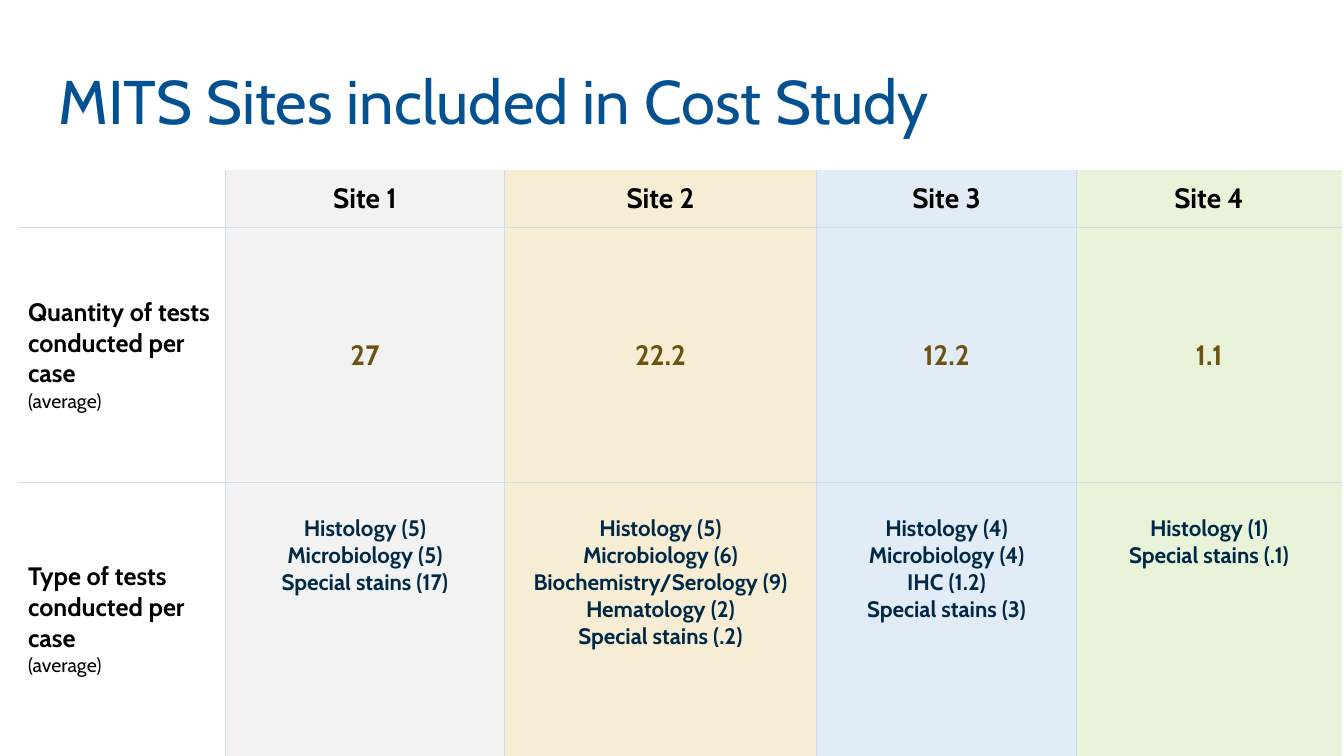
from lxml.etree import SubElement
from pptx import Presentation
from pptx.dml.color import RGBColor
from pptx.enum.text import MSO_ANCHOR, MSO_AUTO_SIZE, PP_ALIGN
from pptx.oxml.ns import qn
from pptx.util import Pt

FONT = "Cabin"
TITLE_BLUE = RGBColor(0x03, 0x51, 0x91)
BLACK = RGBColor(0x00, 0x00, 0x00)
BROWN = RGBColor(0x6D, 0x53, 0x13)
NAVY = RGBColor(0x00, 0x29, 0x48)
RULE_BLUE = RGBColor(0xCC, 0xDD, 0xE9)
SITE_FILLS = [
    RGBColor(0xF2, 0xF2, 0xF2),
    RGBColor(0xF7, 0xED, 0xD4),
    RGBColor(0xE2, 0xEC, 0xF6),
    RGBColor(0xE8, 0xF3, 0xD9),
]

COLUMN_WIDTHS = [148.2, 199.3, 222.9, 185.7, 189.4]
ROW_HEIGHTS = [41, 182, 196]

SITES = ["Site 1", "Site 2", "Site 3", "Site 4"]
QUANTITIES = ["27", "22.2", "12.2", "1.1"]
TEST_TYPES = [
    ["Histology (5)", "Microbiology (5)", "Special stains (17)"],
    ["Histology (5)", "Microbiology (6)", "Biochemistry/Serology (9)",
     "Hematology (2)", "Special stains (.2)"],
    ["Histology (4)", "Microbiology (4)", "IHC (1.2)", "Special stains (3)"],
    ["Histology (1)", "Special stains (.1)"],
]
ROW_LABELS = ["Quantity of tests conducted per case",
              "Type of tests conducted per case"]


def write(paragraph, text, *, size, color, bold=False, align=PP_ALIGN.LEFT):
    paragraph.alignment = align
    run = paragraph.add_run()
    run.text = text
    run.font.name = FONT
    run.font.size = Pt(size)
    run.font.bold = bold
    run.font.color.rgb = color


def add_title(slide, text):
    title = slide.shapes.title
    title.left, title.top = Pt(34.6), Pt(27.4)
    title.width, title.height = Pt(828), Pt(94.3)
    frame = title.text_frame
    frame.auto_size = MSO_AUTO_SIZE.NONE
    frame.vertical_anchor = MSO_ANCHOR.MIDDLE
    frame.paragraphs[0].line_spacing = 0.9
    write(frame.paragraphs[0], text, size=44, color=TITLE_BLUE)


def set_borders(cell, ruled_sides):
    """Rule the named sides (L, R, T, B) and clear the others."""
    properties = cell._tc.get_or_add_tcPr()
    for side in "LRTB":
        border = SubElement(properties, qn(f"a:ln{side}"), w=str(Pt(1)))
        if side in ruled_sides:
            fill = SubElement(border, qn("a:solidFill"))
            SubElement(fill, qn("a:srgbClr"), val=str(RULE_BLUE))
        else:
            SubElement(border, qn("a:noFill"))


def fill_cell(cell, lines, **style):
    frame = cell.text_frame
    for index, line in enumerate(lines):
        paragraph = frame.add_paragraph() if index else frame.paragraphs[0]
        write(paragraph, line, **style)


def add_site_table(slide):
    table = slide.shapes.add_table(
        len(ROW_HEIGHTS), len(COLUMN_WIDTHS), Pt(12.9), Pt(121.6),
        Pt(sum(COLUMN_WIDTHS)), Pt(sum(ROW_HEIGHTS))).table
    for column, width in zip(table.columns, COLUMN_WIDTHS):
        column.width = Pt(width)
    for row, height in zip(table.rows, ROW_HEIGHTS):
        row.height = Pt(height)

    # Inner rules and column colours
    last_row, last_column = len(ROW_HEIGHTS) - 1, len(COLUMN_WIDTHS) - 1
    for r, row in enumerate(table.rows):
        for c, cell in enumerate(row.cells):
            set_borders(cell, "L" * (c > 0) + "R" * (c < last_column)
                        + "T" * (r > 0) + "B" * (r < last_row))
            cell.vertical_anchor = MSO_ANCHOR.MIDDLE
            if c:
                cell.fill.solid()
                cell.fill.fore_color.rgb = SITE_FILLS[c - 1]
            else:
                cell.fill.background()

    # Row labels
    for r, label in enumerate(ROW_LABELS, start=1):
        cell = table.cell(r, 0)
        fill_cell(cell, [label], size=18, color=BLACK, bold=True)
        write(cell.text_frame.add_paragraph(), "(average)",
              size=14, color=BLACK)

    # Site columns
    centred = {"bold": True, "align": PP_ALIGN.CENTER}
    for c, (site, quantity, tests) in enumerate(
            zip(SITES, QUANTITIES, TEST_TYPES), start=1):
        fill_cell(table.cell(0, c), [site], size=20, color=BLACK, **centred)
        fill_cell(table.cell(1, c), [quantity], size=20, color=BROWN, **centred)
        tests_cell = table.cell(2, c)
        tests_cell.vertical_anchor = MSO_ANCHOR.TOP
        tests_cell.margin_top = Pt(23)
        fill_cell(tests_cell, tests, size=16, color=NAVY, **centred)


def main():
    deck = Presentation()
    deck.slide_width, deck.slide_height = Pt(960), Pt(540)
    slide = deck.slides.add_slide(deck.slide_layouts[5])
    add_title(slide, "MITS Sites included in Cost Study")
    add_site_table(slide)
    deck.save("out.pptx")


if __name__ == "__main__":
    main()
